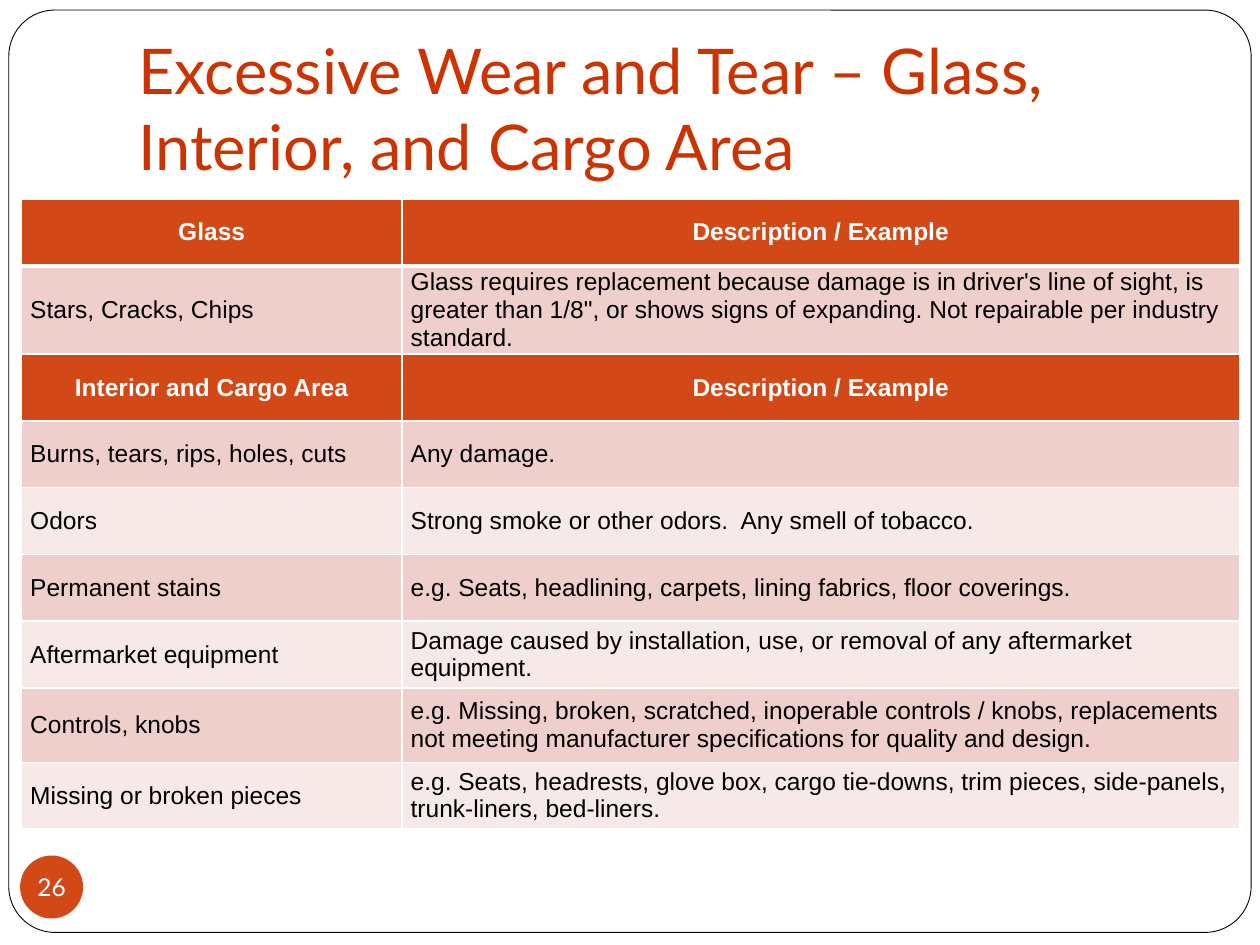
import pptx
import pptx.util
from lxml import etree
from pptx.dml.color import RGBColor
from pptx.enum.shapes import MSO_SHAPE
from pptx.enum.text import MSO_ANCHOR, PP_ALIGN
from pptx.oxml.ns import qn
from pptx.util import Inches, Pt

WHITE = RGBColor(0xFF, 0xFF, 0xFF)
BLACK = RGBColor(0x00, 0x00, 0x00)
ORANGE = RGBColor(0xD3, 0x48, 0x17)
TITLE_RED = RGBColor(0xCC, 0x33, 0x00)
BAND_DARK = RGBColor(0xEF, 0xCF, 0xCC)
BAND_LIGHT = RGBColor(0xF7, 0xE9, 0xE8)

TITLE = "Excessive Wear and Tear – Glass, Interior, and Cargo Area"
PAGE = "26"
SECTIONS = [
    ("Glass", [
        ("Stars, Cracks, Chips",
         "Glass requires replacement because damage is in driver's line of sight, is "
         "greater than 1/8\", or shows signs of expanding. Not repairable per industry standard."),
    ]),
    ("Interior and Cargo Area", [
        ("Burns, tears, rips, holes, cuts", "Any damage."),
        ("Odors", "Strong smoke or other odors.  Any smell of tobacco."),
        ("Permanent stains", "e.g. Seats, headlining, carpets, lining fabrics, floor coverings."),
        ("Aftermarket equipment",
         "Damage caused by installation, use, or removal of any aftermarket equipment."),
        ("Controls, knobs",
         "e.g. Missing, broken, scratched, inoperable controls / knobs, replacements "
         "not meeting manufacturer specifications for quality and design."),
        ("Missing or broken pieces",
         "e.g. Seats, headrests, glove box, cargo tie-downs, trim pieces, side-panels, "
         "trunk-liners, bed-liners."),
    ]),
]
COL_WIDTHS = [3.02, 6.65]
ROW_HEIGHT = 0.53
TALL_ROWS = {"Stars, Cracks, Chips": 0.67, "Controls, knobs": 0.59}


def style(p, font, size, color, bold=False, align=PP_ALIGN.LEFT):
    p.alignment = align
    p.font.name = font
    p.font.size = Pt(size)
    p.font.bold = bold
    p.font.color.rgb = color


def set_margins(target, left, top, right, bottom):
    target.margin_left, target.margin_top = Inches(left), Inches(top)
    target.margin_right, target.margin_bottom = Inches(right), Inches(bottom)


def add_plain_shape(slide, kind, box, fill):
    sp = slide.shapes.add_shape(kind, *map(Inches, box))
    sp.shadow.inherit = False
    sp.fill.solid()
    sp.fill.fore_color.rgb = fill
    return sp


def set_borders(cell, bottom):
    tc_pr = cell._tc.get_or_add_tcPr()
    for side, width in (("L", 1), ("R", 1), ("T", 1), ("B", bottom)):
        ln = etree.SubElement(tc_pr, qn(f"a:ln{side}"), w=str(Pt(width)))
        solid = etree.SubElement(ln, qn("a:solidFill"))
        etree.SubElement(solid, qn("a:srgbClr"), val=str(WHITE))


def fill_cell(cell, text, fill, header, bottom):
    set_borders(cell, bottom)
    cell.fill.solid()
    cell.fill.fore_color.rgb = fill
    cell.vertical_anchor = MSO_ANCHOR.MIDDLE
    set_margins(cell, 0.07, 0, 0.07, 0)
    cell.text = text
    style(cell.text_frame.paragraphs[0], "Arial", 14, WHITE if header else BLACK,
          header, PP_ALIGN.CENTER if header else PP_ALIGN.LEFT)


def add_wear_table(slide):
    rows = []
    for name, items in SECTIONS:
        rows.append((name, "Description / Example", ORANGE))
        for i, (part, example) in enumerate(items):
            rows.append((part, example, BAND_LIGHT if i % 2 else BAND_DARK))
    heights = [TALL_ROWS.get(row[0], ROW_HEIGHT) for row in rows]
    table = slide.shapes.add_table(
        len(rows), len(COL_WIDTHS), Inches(0.17), Inches(1.58),
        Inches(sum(COL_WIDTHS)), Inches(sum(heights))).table
    for col, width in zip(table.columns, COL_WIDTHS):
        col.width = Inches(width)
    for r, (*texts, fill) in enumerate(rows):
        table.rows[r].height = Inches(heights[r])
        for c, text in enumerate(texts):
            fill_cell(table.cell(r, c), text, fill, fill == ORANGE, 1 if r else 3)


def main():
    prs = pptx.Presentation()
    prs.slide_width, prs.slide_height = Inches(10), Inches(7.5)
    slide = prs.slides.add_slide(prs.slide_layouts[6])

    frame = add_plain_shape(slide, MSO_SHAPE.ROUNDED_RECTANGLE, (0.07, 0.08, 9.86, 7.32), WHITE)
    frame.adjustments[0] = 0.05
    frame.line.color.rgb = BLACK
    frame.line.width = Pt(0.5)

    title = slide.shapes.add_textbox(*map(Inches, (1, 0.3, 8.5, 1.25)))
    tf = title.text_frame
    tf.word_wrap = True
    tf.vertical_anchor = MSO_ANCHOR.BOTTOM
    set_margins(tf, 0.1, 0.05, 0.1, 0.1)
    tf.text = TITLE
    style(tf.paragraphs[0], "Lato", 36, TITLE_RED)

    badge = add_plain_shape(slide, MSO_SHAPE.OVAL, (0.16, 6.79, 0.5, 0.5), ORANGE)
    badge.line.fill.background()
    tf = badge.text_frame
    tf.word_wrap = False
    tf.vertical_anchor = MSO_ANCHOR.MIDDLE
    set_margins(tf, 0, 0, 0, 0)
    tf.text = PAGE
    style(tf.paragraphs[0], "Lato", 14, WHITE, align=PP_ALIGN.CENTER)

    add_wear_table(slide)
    prs.save("out.pptx")


if __name__ == "__main__":
    main()
